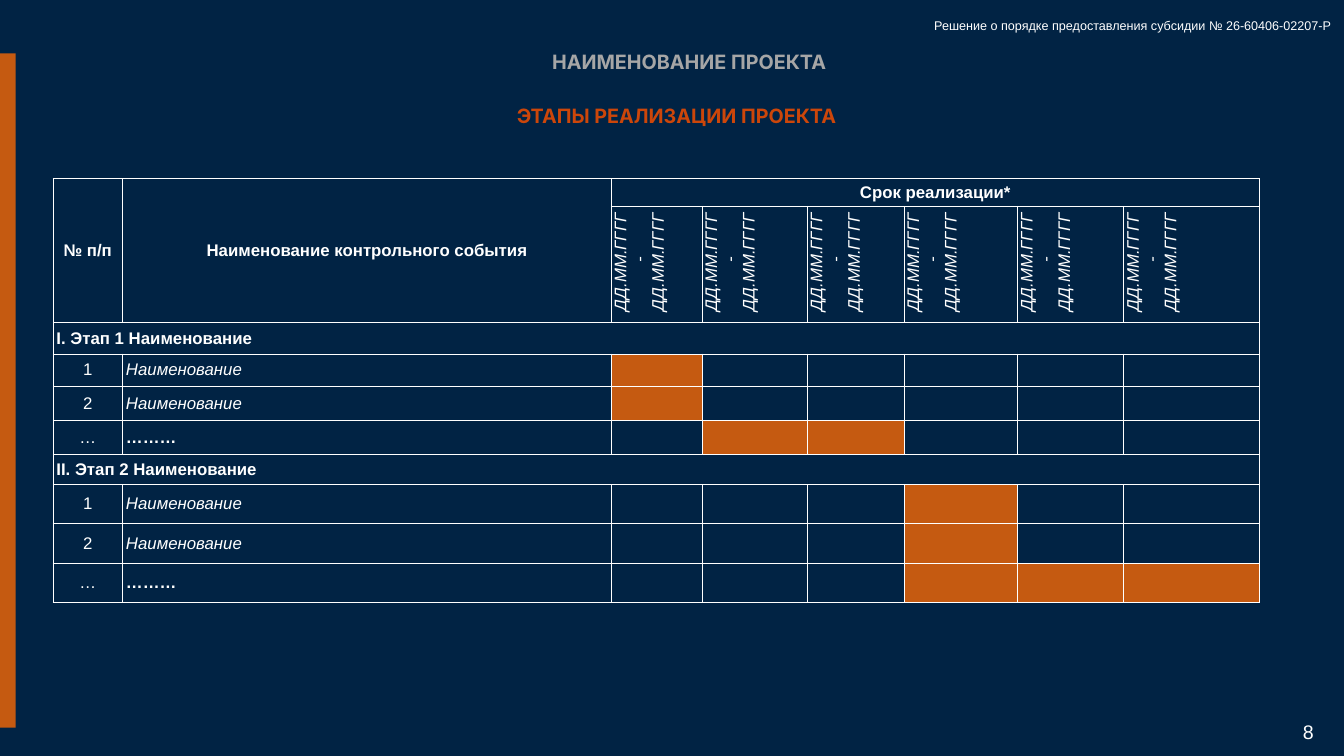
from dataclasses import dataclass

from lxml import etree
from pptx import Presentation
from pptx.dml.color import RGBColor
from pptx.enum import shapes, text
from pptx.oxml import ns
from pptx.util import Inches, Pt

LEFT, CENTER, RIGHT = text.PP_ALIGN.LEFT, text.PP_ALIGN.CENTER, text.PP_ALIGN.RIGHT
TOP, MIDDLE = text.MSO_ANCHOR.TOP, text.MSO_ANCHOR.MIDDLE


@dataclass(frozen=True)
class Theme:
    background: str = "012344"
    accent: str = "C55A11"
    heading: str = "CC460A"
    muted: str = "A6A6A6"
    light: str = "FFFFFF"
    heading_font: str = "Inter"
    body_font: str = "Arial"
    heading_size: float = 28.2
    page_size: float = 28
    table_size: float = 24
    note_size: float = 18
    cell_space: float = 21.2


class SlideBuilder:
    def __init__(self, deck, theme):
        self.theme = theme
        self.slide = deck.slides.add_slide(deck.slide_layouts[5])
        self.paint(self.slide.background.fill, theme.background)

    def paint(self, fill, color):
        fill.solid()
        fill.fore_color.rgb = RGBColor.from_string(color)

    def run(self, paragraph, words, size, color, font, bold=False, italic=False):
        run = paragraph.add_run()
        run.text = words
        run.font.size, run.font.name = Pt(size), font
        run.font.bold, run.font.italic = bold, italic
        run.font.color.rgb = RGBColor.from_string(color)

    def fill_frame(self, frame, words, size, color, font, bold=False, align=LEFT,
                   anchor=TOP, insets=(0.1, 0.05), wrap=True):
        frame.word_wrap = wrap
        frame.auto_size = text.MSO_AUTO_SIZE.NONE
        frame.vertical_anchor = anchor
        frame.margin_left = frame.margin_right = Inches(insets[0])
        frame.margin_top = frame.margin_bottom = Inches(insets[1])
        frame.paragraphs[0].alignment = align
        self.run(frame.paragraphs[0], words, size, color, font, bold)

    def title(self, box, words):
        title = self.slide.shapes.title
        title.left, title.top, title.width, title.height = map(Inches, box)
        self.fill_frame(title.text_frame, words, self.theme.heading_size,
                        self.theme.heading, self.theme.heading_font, bold=True,
                        align=CENTER, insets=(0.04, 0.04))

    def label(self, box, words, size, color, font, **style):
        label = self.slide.shapes.add_textbox(*map(Inches, box))
        self.fill_frame(label.text_frame, words, size, color, font, **style)

    def bar(self, box):
        bar = self.slide.shapes.add_shape(shapes.MSO_SHAPE.RECTANGLE, *map(Inches, box))
        bar.shadow.inherit = False
        self.paint(bar.fill, self.theme.accent)
        bar.line.fill.background()

    def table(self, left, top, widths, heights):
        frame = self.slide.shapes.add_table(
            len(heights), len(widths), Inches(left), Inches(top),
            Inches(sum(widths)), Inches(sum(heights)))
        table = frame.table
        table.first_row = table.horz_banding = False
        for column, width in zip(table.columns, widths):
            column.width = Inches(width)
        for row, height in zip(table.rows, heights):
            row.height = Inches(height)
        for cell in table.iter_cells():
            cell.fill.background()
            self.border(cell)
        return table

    def border(self, cell):
        properties = cell._tc.get_or_add_tcPr()
        for position, side in enumerate(("lnL", "lnR", "lnT", "lnB")):
            line = etree.Element(ns.qn(f"a:{side}"), w=str(Pt(1)))
            fill = etree.SubElement(line, ns.qn("a:solidFill"))
            etree.SubElement(fill, ns.qn("a:srgbClr"), val=self.theme.light)
            properties.insert(position, line)

    def cell(self, cell, lines, align=LEFT, bold=False, italic=False,
             spaced=True, vertical=False):
        cell.vertical_anchor = MIDDLE
        cell.margin_left = cell.margin_right = Inches(0.07)
        cell.margin_top = cell.margin_bottom = 0
        if vertical:
            cell._tc.get_or_add_tcPr().set("vert", "vert270")
        frame = cell.text_frame
        for index, words in enumerate(lines):
            paragraph = frame.add_paragraph() if index else frame.paragraphs[0]
            paragraph.alignment = align
            if spaced:
                paragraph.space_after = Pt(self.theme.cell_space)
            if vertical:
                paragraph._p.get_or_add_pPr().set("marL", str(Inches(0.08)))
            self.run(paragraph, words, self.theme.table_size, self.theme.light,
                     self.theme.body_font, bold, italic)


# Schedule content: each event lists the periods it occupies
COLUMNS = [1.38, 9.7, 1.8, 2.09, 1.92, 2.25, 2.11, 2.69]
ROWS = [0.55, 2.21, 0.62, 0.64, 0.68, 0.68, 0.59, 0.78, 0.78, 0.78]
FIRST_PERIOD = 2
PERIOD = ["ДД.ММ.ГГГГ", " - ДД.ММ.ГГГГ"]
STAGES = [
    ("I. Этап 1 Наименование",
     [("1", "Наименование", [0]), ("2", "Наименование", [0]), ("…", "………", [1, 2])]),
    ("II. Этап 2 Наименование",
     [("1", "Наименование", [3]), ("2", "Наименование", [3]), ("…", "………", [3, 4, 5])]),
]


def add_schedule(builder):
    table = builder.table(1.05, 3.54, COLUMNS, ROWS)
    last = len(COLUMNS) - 1

    # Header
    for column, heading in enumerate(["№ п/п", "Наименование контрольного события"]):
        table.cell(0, column).merge(table.cell(1, column))
        builder.cell(table.cell(0, column), [heading], CENTER, bold=True)
    table.cell(0, FIRST_PERIOD).merge(table.cell(0, last))
    builder.cell(table.cell(0, FIRST_PERIOD), ["Срок реализации*"], CENTER, bold=True)
    for column in range(FIRST_PERIOD, last + 1):
        builder.cell(table.cell(1, column), PERIOD, CENTER, italic=True,
                     spaced=False, vertical=True)

    # Stages and their events
    row = 2
    for stage, events in STAGES:
        table.cell(row, 0).merge(table.cell(row, last))
        builder.cell(table.cell(row, 0), [stage], bold=True)
        for row, (number, event, periods) in enumerate(events, row + 1):
            named = event == "Наименование"
            builder.cell(table.cell(row, 0), [number], CENTER, spaced=False)
            builder.cell(table.cell(row, 1), [event], bold=not named, italic=named)
            for period in periods:
                builder.paint(table.cell(row, FIRST_PERIOD + period).fill,
                              builder.theme.accent)
        row += 1


def main():
    deck = Presentation()
    deck.slide_width, deck.slide_height = Inches(26.67), Inches(15)
    theme = Theme()
    builder = SlideBuilder(deck, theme)

    # Title and side bar
    builder.title((8.61, 2.02, 9.63, 0.56), "ЭТАПЫ РЕАЛИЗАЦИИ ПРОЕКТА")
    builder.bar((0, 1.06, 0.31, 13.38))

    add_schedule(builder)

    # Page number, project name and decision reference
    builder.label((25.39, 14.22, 0.81, 0.61), "8", theme.page_size, theme.light,
                  theme.body_font, align=RIGHT, anchor=MIDDLE, insets=(0.13, 0.13))
    builder.label((1.92, 0.94, 23.51, 0.58), "НАИМЕНОВАНИЕ ПРОЕКТА", theme.heading_size,
                  theme.muted, theme.heading_font, bold=True, align=CENTER)
    builder.label((18.44, 0.3, 8.22, 0.4),
                  "Решение о порядке предоставления субсидии № 26-60406-02207-Р",
                  theme.note_size, theme.light, theme.body_font, wrap=False)

    deck.save("out.pptx")


if __name__ == "__main__":
    main()
